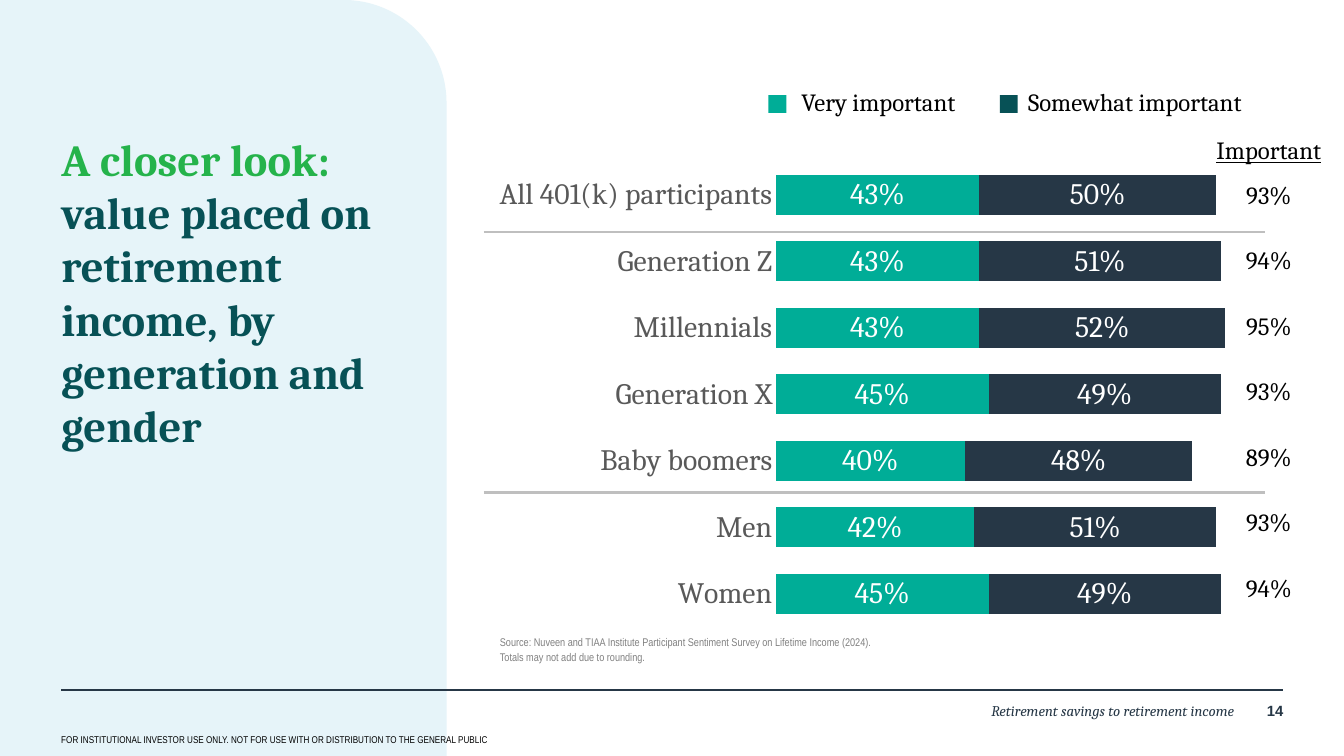
from lxml import etree
from pptx import Presentation, util as u
from pptx.chart.data import CategoryChartData
from pptx.dml.color import RGBColor
from pptx.enum import chart as charts, shapes, text
from pptx.oxml import ns

Inches, Pt = u.Inches, u.Pt
COLORS = {
    "panel": "E6F4F9", "navy": "263746", "teal": "00AD97", "pine": "075156",
    "green": "25B34B", "gray": "808080", "label": "595959", "rule": "BFBFBF",
    "black": "000000", "white": "FFFFFF",
}
TITLE = {"name": "Cambria", "size": Pt(36), "bold": True, "color": "green"}
SOURCE = {"name": "Arial Narrow", "size": Pt(9), "color": "gray"}
NOTICE = {"name": "Arial Narrow", "size": Pt(8), "color": "black"}
FOOTER = {"name": "Cambria", "size": Pt(12), "italic": True, "color": "navy"}
NUMBER = {"name": "Arial", "size": Pt(12), "bold": True, "color": "navy"}
LEGEND = {"name": "Cambria", "size": Pt(20), "color": "black"}
CHART = {"name": "Cambria", "size": Pt(24), "color": "black"}

GROUPS = ["All 401(k) participants", "Generation Z", "Millennials", "Generation X",
          "Baby boomers", "Men", "Women"]
SERIES = [
    ("Very important", "teal", [0.43, 0.43, 0.43, 0.45, 0.40, 0.42, 0.45]),
    ("Somewhat important", "navy", [0.50, 0.51, 0.52, 0.49, 0.48, 0.51, 0.49]),
]
TOTALS = ["93%", "94%", "95%", "93%", "89%", "93%", "94%"]


def rgb(name):
    return RGBColor.from_string(COLORS[name])


def format_font(font, formats):
    for name, value in formats.items():
        if name == "color":
            font.color.rgb = rgb(value)
        else:
            setattr(font, name, value)


def add_run(paragraph, words, formats):
    run = paragraph.add_run()
    run.text = words
    format_font(run.font, formats)


def set_frame(frame, inset=(0, 0), anchor=text.MSO_ANCHOR.TOP):
    """Set wrapping, anchor and the (horizontal, vertical) insets."""
    horizontal, vertical = (Inches(value) for value in inset)
    settings = {
        "word_wrap": True, "auto_size": text.MSO_AUTO_SIZE.NONE,
        "vertical_anchor": anchor, "margin_left": horizontal,
        "margin_right": horizontal, "margin_top": vertical, "margin_bottom": vertical,
    }
    for name, value in settings.items():
        setattr(frame, name, value)


def place(shape, *box):
    for name, value in zip(("left", "top", "width", "height"), box):
        setattr(shape, name, Inches(value))


def add_text(slide, box, words, formats, align=text.PP_ALIGN.LEFT, inset=(0, 0)):
    """Add a text box and return its first paragraph."""
    frame = slide.shapes.add_textbox(*map(Inches, box)).text_frame
    set_frame(frame, inset)
    paragraph = frame.paragraphs[0]
    paragraph.alignment = align
    add_run(paragraph, words, formats)
    return paragraph


def add_block(slide, kind, box, color):
    shape = slide.shapes.add_shape(kind, *map(Inches, box))
    shape.shadow.inherit = False
    shape.fill.solid()
    shape.fill.fore_color.rgb = rgb(color)
    shape.line.fill.background()
    return shape


def add_rule(slide, left, right, top, color):
    rule = slide.shapes.add_connector(
        shapes.MSO_CONNECTOR.STRAIGHT, *map(Inches, (left, top, right, top)))
    rule.line.color.rgb = rgb(color)
    rule.line.width = Pt(2)
    etree.SubElement(rule._element.spPr, ns.qn("a:effectLst"))


def add_frame(slide):
    """Add the side panel and the footer."""
    panel = add_block(slide, shapes.MSO_SHAPE.ROUND_1_RECTANGLE, (0, 0, 5.02, 8.5), "panel")
    panel.adjustments[0] = 0.23
    add_rule(slide, 0.69, 14.42, 7.76, "navy")
    right = text.PP_ALIGN.RIGHT
    add_text(slide, (14.03, 7.89, 0.4, 0.33), "14", NUMBER, right)
    add_text(slide, (5.32, 7.89, 8.56, 0.4),
             "Retirement savings to retirement income", FOOTER, right)
    add_text(slide, (0.59, 8.2, 11.05, 0.24),
             "FOR INSTITUTIONAL INVESTOR USE ONLY. "
             "NOT FOR USE WITH OR DISTRIBUTION TO THE GENERAL PUBLIC",
             NOTICE, inset=(0.1, 0.05))


def fill_title(title):
    place(title, 0.69, 1.48, 3.85, 3.64)
    set_frame(title.text_frame)
    paragraph = title.text_frame.paragraphs[0]
    paragraph.alignment = text.PP_ALIGN.LEFT
    add_run(paragraph, "A closer look: ", TITLE)
    add_run(paragraph, "value placed on retirement income, by generation and gender",
            {**TITLE, "color": "pine"})


def fill_source(body):
    place(body, 5.62, 7.05, 8.81, 0.41)
    frame = body.text_frame
    set_frame(frame, anchor=text.MSO_ANCHOR.BOTTOM)
    frame.text = ("Source: Nuveen and TIAA Institute Participant Sentiment Survey "
                  "on Lifetime Income (2024).\nTotals may not add due to rounding.")
    for paragraph in frame.paragraphs:
        properties = paragraph._p.get_or_add_pPr()
        properties.set("marL", "0")
        properties.set("indent", "0")
        etree.SubElement(properties, ns.qn("a:buNone"))
        paragraph.space_before = Pt(0)
        paragraph.line_spacing = 1.1
        format_font(paragraph.runs[0].font, SOURCE)


def add_importance_chart(slide):
    data = CategoryChartData(number_format="0%")
    data.categories = GROUPS
    for name, _, values in SERIES:
        data.add_series(name, values)
    chart = slide.shapes.add_chart(
        charts.XL_CHART_TYPE.BAR_STACKED, *map(Inches, (5.44, 1.71, 8.78, 5.45)), data).chart
    chart.has_legend = chart.has_title = False
    format_font(chart.font, CHART)
    for axis in (chart.category_axis, chart.value_axis):
        axis.has_major_gridlines = False
        axis.major_tick_mark = axis.minor_tick_mark = charts.XL_TICK_MARK.NONE
        axis.format.line.fill.background()
        format_font(axis.tick_labels.font, {**CHART, "color": "label"})
    chart.category_axis.reverse_order = True
    chart.value_axis.tick_label_position = charts.XL_TICK_LABEL_POSITION.NONE
    chart.value_axis.minimum_scale, chart.value_axis.maximum_scale = 0, 1
    plot = chart.plots[0]
    plot.gap_width, plot.overlap, plot.vary_by_categories = 66, 100, False
    for series, (_, color, _) in zip(plot.series, SERIES):
        series.format.fill.solid()
        series.format.fill.fore_color.rgb = rgb(color)
        labels = series.data_labels
        labels.show_value = True
        labels.position = charts.XL_LABEL_POSITION.CENTER
        labels.number_format, labels.number_format_is_linked = "0%", False
        format_font(labels.font, {**CHART, "color": "white"})


def add_legend(slide):
    paragraph = add_text(slide, (8.91, 0.93, 5.41, 0.78),
                         "\t".join(name for name, _, _ in SERIES), LEGEND, inset=(0.1, 0.05))
    tabs = etree.SubElement(paragraph._p.get_or_add_pPr(), ns.qn("a:tabLst"))
    etree.SubElement(tabs, ns.qn("a:tab"), pos=str(Inches(2.55)), algn="l")
    for left, color in ((8.64, "teal"), (11.24, "pine")):
        add_block(slide, shapes.MSO_SHAPE.RECTANGLE, (left, 1.07, 0.2, 0.2), color)


def add_totals(slide):
    heading = add_text(slide, (13.46, 1.52, 1.61, 0.33), "Important",
                       {**LEGEND, "underline": True}, text.PP_ALIGN.CENTER)
    heading.space_after = Pt(12)
    frame = heading._parent
    for total in TOTALS:
        paragraph = frame.add_paragraph()
        paragraph.alignment = text.PP_ALIGN.CENTER
        paragraph.space_after = Pt(29)
        add_run(paragraph, total, LEGEND)


def main():
    presentation = Presentation()
    presentation.slide_width, presentation.slide_height = Inches(15.11), Inches(8.5)
    slide = presentation.slides.add_slide(presentation.slide_layouts[1])
    title, body = slide.placeholders
    add_frame(slide)
    fill_title(title)
    fill_source(body)
    for placeholder in (title, body):
        slide.shapes._spTree.append(placeholder._element)
    add_importance_chart(slide)
    add_legend(slide)
    for top in (2.61, 5.54):
        add_rule(slide, 5.44, 14.22, top, "rule")
    add_totals(slide)
    presentation.save("out.pptx")


if __name__ == "__main__":
    main()
